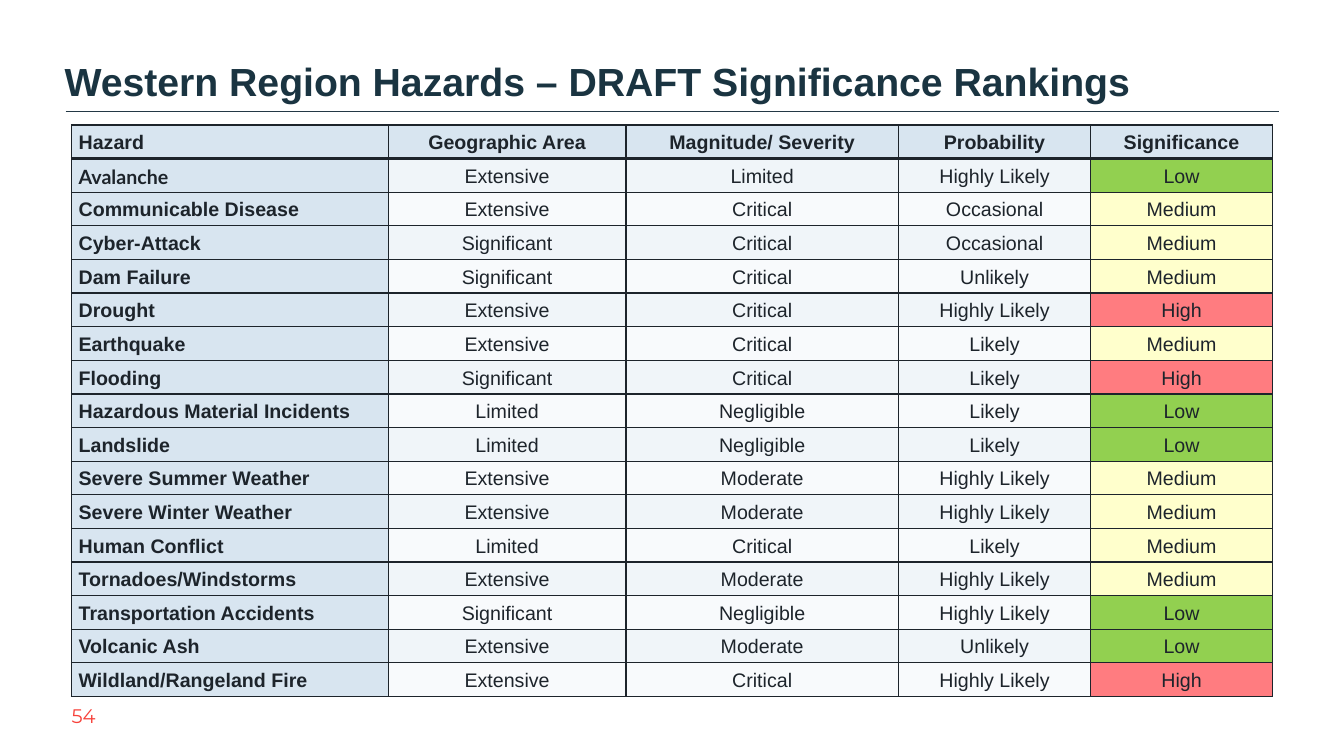
from lxml import etree
from pptx import Presentation
from pptx.dml.color import RGBColor
from pptx.enum.shapes import MSO_CONNECTOR
from pptx.enum.text import MSO_ANCHOR, PP_ALIGN
from pptx.oxml.ns import qn
from pptx.util import Inches, Pt

LEFT, CENTER = PP_ALIGN.LEFT, PP_ALIGN.CENTER
MIDDLE, BOTTOM = MSO_ANCHOR.MIDDLE, MSO_ANCHOR.BOTTOM
STRAIGHT = MSO_CONNECTOR.STRAIGHT
TITLE_ONLY = 5

COLORS = {
    "title": "1A3441",
    "rule": "233845",
    "ink": "1D242B",
    "number": "F7413A",
    "label": "D8E5F0",
    "odd": "F0F5F9",
    "even": "F8FAFC",
    "Low": "92D050",
    "Medium": "FFFFCC",
    "High": "FF7C80",
}
COLUMN_WIDTHS = [3.14, 2.36, 2.7, 1.91, 1.8]
TABLE_HEIGHT = 5.67
HAZARDS = [
    ("Hazard", "Geographic Area", "Magnitude/ Severity", "Probability", "Significance"),
    ("Avalanche", "Extensive", "Limited", "Highly Likely", "Low"),
    ("Communicable Disease", "Extensive", "Critical", "Occasional", "Medium"),
    ("Cyber-Attack", "Significant", "Critical", "Occasional", "Medium"),
    ("Dam Failure", "Significant", "Critical", "Unlikely", "Medium"),
    ("Drought", "Extensive", "Critical", "Highly Likely", "High"),
    ("Earthquake", "Extensive", "Critical", "Likely", "Medium"),
    ("Flooding", "Significant", "Critical", "Likely", "High"),
    ("Hazardous Material Incidents", "Limited", "Negligible", "Likely", "Low"),
    ("Landslide", "Limited", "Negligible", "Likely", "Low"),
    ("Severe Summer Weather", "Extensive", "Moderate", "Highly Likely", "Medium"),
    ("Severe Winter Weather", "Extensive", "Moderate", "Highly Likely", "Medium"),
    ("Human Conflict", "Limited", "Critical", "Likely", "Medium"),
    ("Tornadoes/Windstorms", "Extensive", "Moderate", "Highly Likely", "Medium"),
    ("Transportation Accidents", "Significant", "Negligible", "Highly Likely", "Low"),
    ("Volcanic Ash", "Extensive", "Moderate", "Unlikely", "Low"),
    ("Wildland/Rangeland Fire", "Extensive", "Critical", "Highly Likely", "High"),
]


def rgb(name):
    return RGBColor.from_string(COLORS[name])


def format_paragraph(paragraph, size, color, font="Arial", bold=False, align=LEFT):
    paragraph.alignment = align
    paragraph.font.name = font
    paragraph.font.size = Pt(size)
    paragraph.font.bold = bold
    paragraph.font.color.rgb = rgb(color)


def set_title(slide, text):
    title = slide.shapes.title
    title.left, title.top = Inches(0.64), Inches(0.28)
    title.width, title.height = Inches(10.77), Inches(0.76)
    frame = title.text_frame
    frame.text = text
    frame.word_wrap = True
    frame.vertical_anchor = BOTTOM
    frame.margin_left = frame.margin_right = 0
    frame.margin_top = frame.margin_bottom = 0
    paragraph = frame.paragraphs[0]
    paragraph.line_spacing = 1.2
    format_paragraph(paragraph, 28, "title", bold=True)


def add_title_rule(slide):
    rule = slide.shapes.add_connector(
        STRAIGHT, Inches(0.65), Inches(1.1), Inches(12.69), Inches(1.1))
    rule.line.color.rgb = rgb("rule")
    rule.line.width = Pt(0.5)
    etree.SubElement(rule._element.spPr, qn("a:effectLst"))


def add_page_number(slide, number):
    box = slide.shapes.add_textbox(Inches(0), Inches(6.9), Inches(1.66), Inches(0.4))
    frame = box.text_frame
    frame.text = number
    frame.word_wrap = True
    frame.vertical_anchor = MIDDLE
    format_paragraph(frame.paragraphs[0], 14, "number", "Montserrat", align=CENTER)


def set_borders(cell, top, bottom):
    properties = cell._tc.get_or_add_tcPr()
    for side, width in (("L", 1), ("R", 1), ("T", top), ("B", bottom)):
        line = etree.SubElement(properties, qn(f"a:ln{side}"), w=str(Pt(width)))
        fill = etree.SubElement(line, qn("a:solidFill"))
        etree.SubElement(fill, qn("a:srgbClr"), val=COLORS["ink"])


def cell_fill(row, column, text):
    if row == 0 or column == 0:
        return "label"
    if text in COLORS:
        return text
    return "odd" if row % 2 else "even"


def format_cell(cell, row, column, text):
    cell.text = text
    cell.vertical_anchor = MIDDLE
    cell.margin_left = cell.margin_right = Inches(0.07)
    cell.margin_top = cell.margin_bottom = 0
    set_borders(cell, 3 if row == 1 else 1, 3 if row == 0 else 1)
    cell.fill.solid()
    cell.fill.fore_color.rgb = rgb(cell_fill(row, column, text))
    paragraph = cell.text_frame.paragraphs[0]
    paragraph.line_spacing = 1.1
    paragraph.space_after = Pt(6)
    format_paragraph(
        paragraph, 14, "ink",
        font="Lato" if text == "Avalanche" else "Arial",
        bold=row == 0 or column == 0,
        align=CENTER if column else LEFT)


def add_hazard_table(slide):
    table = slide.shapes.add_table(
        len(HAZARDS), len(COLUMN_WIDTHS), Inches(0.71), Inches(1.24),
        Inches(sum(COLUMN_WIDTHS)), Inches(TABLE_HEIGHT)).table
    for column, width in zip(table.columns, COLUMN_WIDTHS):
        column.width = Inches(width)
    for row, values in enumerate(HAZARDS):
        table.rows[row].height = Inches(TABLE_HEIGHT / len(HAZARDS))
        for column, text in enumerate(values):
            format_cell(table.cell(row, column), row, column, text)


def main():
    presentation = Presentation()
    presentation.slide_width = Inches(13.33)
    presentation.slide_height = Inches(7.5)
    slide = presentation.slides.add_slide(presentation.slide_layouts[TITLE_ONLY])
    add_page_number(slide, "54")
    add_title_rule(slide)
    set_title(slide, "Western Region Hazards – DRAFT Significance Rankings")
    add_hazard_table(slide)
    presentation.save("out.pptx")


if __name__ == "__main__":
    main()
